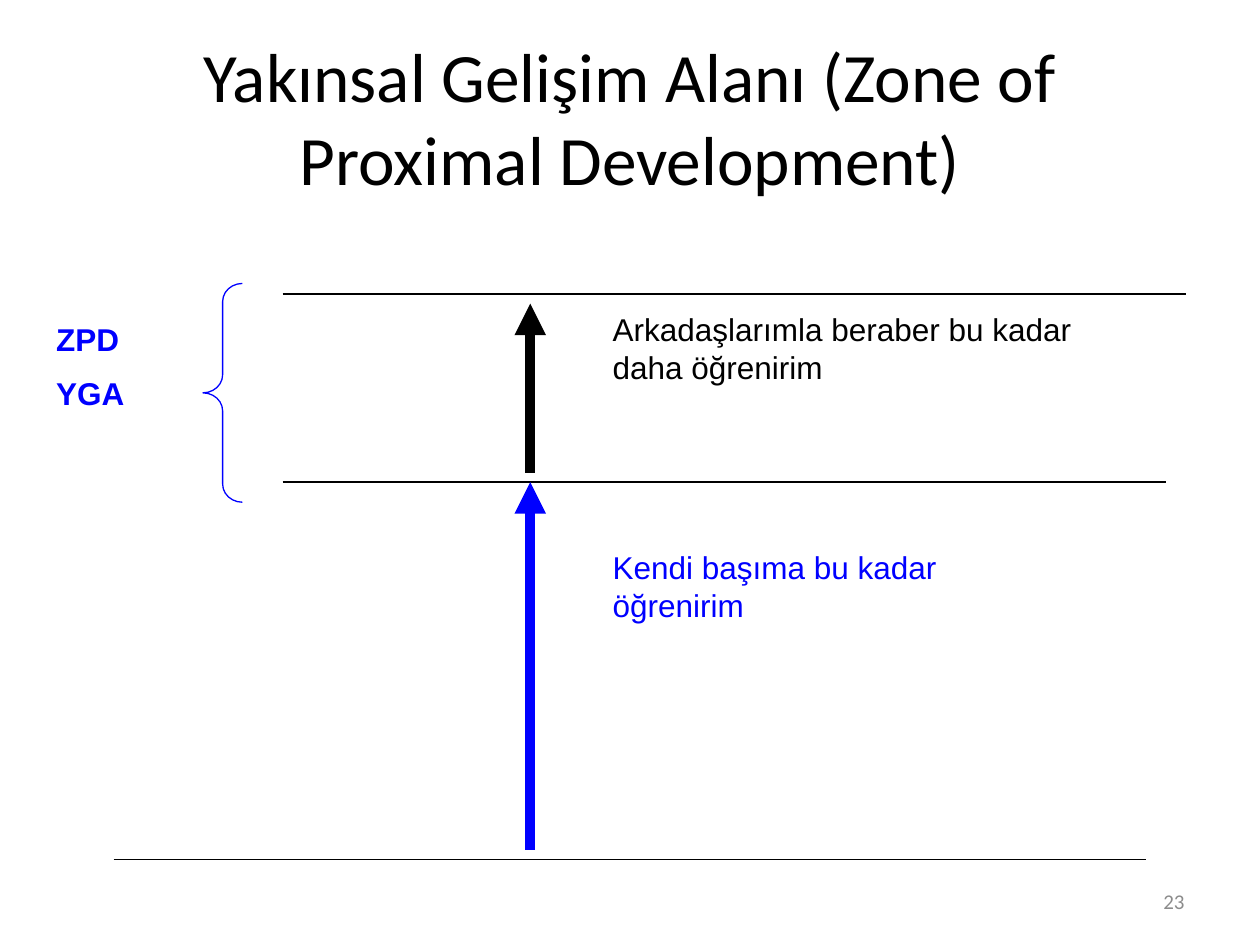
"""Builds the slide on the Zone of Proximal Development."""
from pptx import Presentation, util as u
from pptx.dml.color import RGBColor
from pptx.enum import shapes, text
from pptx.oxml.ns import qn
from lxml import etree

BLACK, BLUE, GREY = "000000", "0000FF", "8C8C8C"
TITLE = "Yakınsal Gelişim Alanı (Zone of Proximal Development)"
PAGE = "23"
LABELS = [
    (["Kendi başıma bu kadar öğrenirim"], (343, 309.5, 232.5, 65), BLUE, False),
    (["Arkadaşlarımla beraber bu kadar daha öğrenirim"], (343, 173.5, 306, 65), BLACK, False),
    (["ZPD", "YGA"], (25, 179.5, 85, 79), BLUE, True),
]
LEVELS = [(65, 655, 491), (161.5, 666, 275.5), (161.5, 677.5, 168)]
ARROW_X = 303
ARROWS = [(485.5, 275.5, BLUE), (270, 173.5, BLACK)]
BRACE = (116, 162, 22.5, 125)


def color(value):
    return RGBColor.from_string(value)


def points(values):
    return [u.Pt(value) for value in values]


def write(paragraph, words, font, size, ink, bold=False):
    run = paragraph.add_run()
    run.text = words
    run.font.name, run.font.size, run.font.bold = font, u.Pt(size), bold
    run.font.color.rgb = color(ink)


def add_label(slide, lines, box, ink, bold):
    frame = slide.shapes.add_textbox(*points(box)).text_frame
    frame.word_wrap = True
    for index, words in enumerate(lines):
        paragraph = frame.add_paragraph() if index else frame.paragraphs[0]
        paragraph.space_before = u.Pt(9)
        write(paragraph, words, "Arial", 18, ink, bold)


def add_line(slide, ends, ink, width, arrow=False):
    line = slide.shapes.add_connector(shapes.MSO_CONNECTOR.STRAIGHT, *points(ends))
    line.line.color.rgb = color(ink)
    line.line.width = u.Pt(width)
    if arrow:
        etree.SubElement(line.line._get_or_add_ln(), qn("a:tailEnd"), type="triangle")
    etree.SubElement(line._element.spPr, qn("a:effectLst"))


def add_title(slide):
    title = slide.shapes.title
    title.left, title.top, title.width, title.height = points((36, 21.6, 648, 90))
    frame = title.text_frame
    frame.word_wrap = True
    frame.vertical_anchor = text.MSO_ANCHOR.MIDDLE
    frame.paragraphs[0].alignment = text.PP_ALIGN.CENTER
    write(frame.paragraphs[0], TITLE, "Calibri", 39.6, BLACK)


def add_page_number(slide):
    frame = slide.shapes.add_textbox(*points((516, 500.5, 168, 28.75))).text_frame
    frame.word_wrap = True
    frame.vertical_anchor = text.MSO_ANCHOR.MIDDLE
    frame.paragraphs[0].alignment = text.PP_ALIGN.RIGHT
    write(frame.paragraphs[0], PAGE, "Calibri", 12, GREY)


def add_brace(slide):
    brace = slide.shapes.add_shape(shapes.MSO_SHAPE.LEFT_BRACE, *points(BRACE))
    brace.adjustments[0], brace.adjustments[1] = 0.46, 0.5
    brace.shadow.inherit = False
    brace.fill.background()
    brace.line.color.rgb = color(BLUE)
    brace.line.width = u.Pt(0.75)


def main():
    deck = Presentation()
    deck.slide_width, deck.slide_height = points((720, 540))
    slide = deck.slides.add_slide(deck.slide_layouts[5])
    add_title(slide)
    add_page_number(slide)
    for left, right, y in LEVELS:
        add_line(slide, (left, y, right, y), BLACK, 0.75)
    for bottom, top, ink in ARROWS:
        add_line(slide, (ARROW_X, bottom, ARROW_X, top), ink, 6, arrow=True)
    add_brace(slide)
    for label in LABELS:
        add_label(slide, *label)
    deck.save("out.pptx")


if __name__ == "__main__":
    main()
